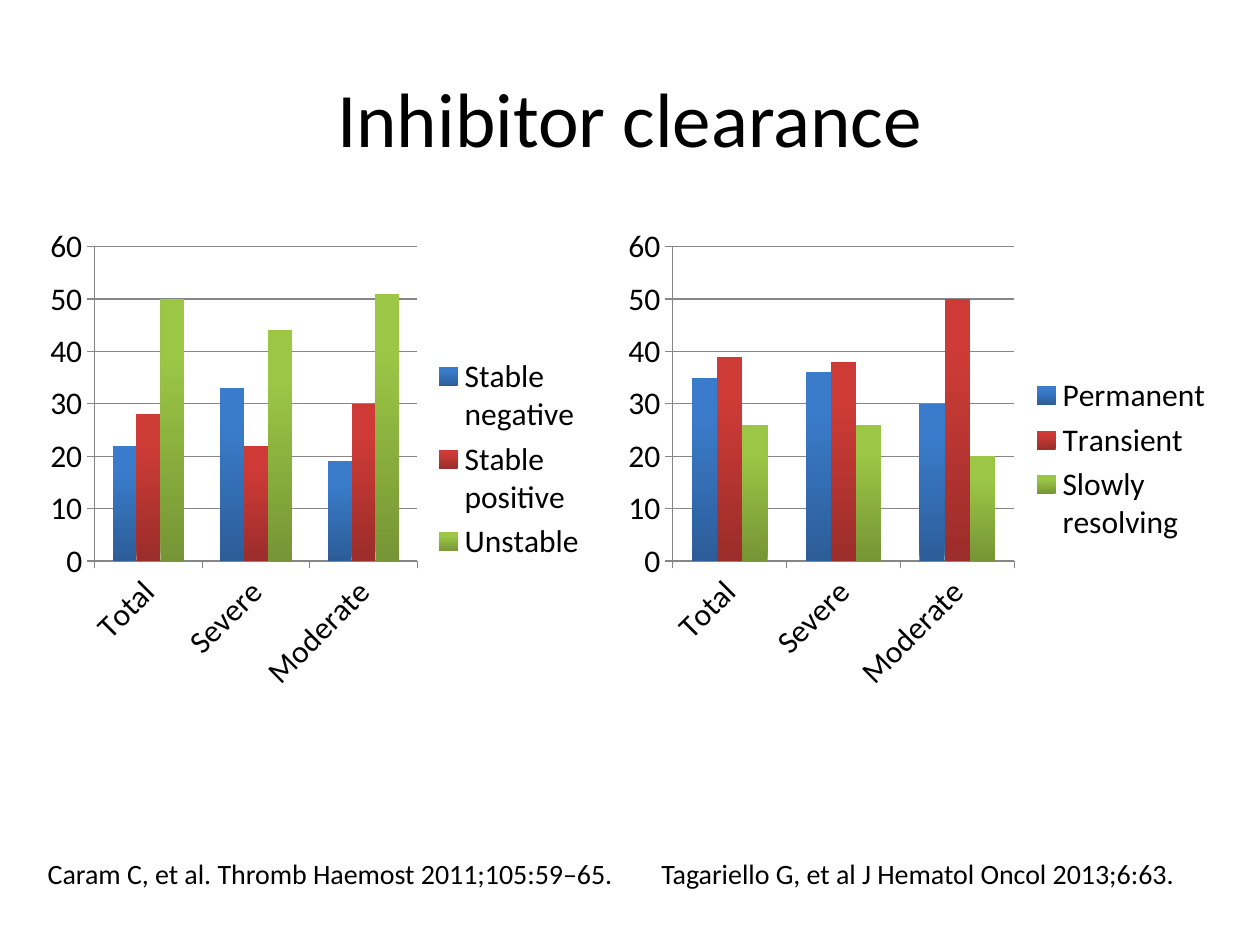
from pptx import Presentation
from pptx.chart.data import CategoryChartData
from pptx.dml.color import RGBColor
from pptx.enum.chart import XL_CHART_TYPE as ChartType, XL_LEGEND_POSITION as LegendPosition
from pptx.enum.chart import XL_TICK_MARK as TickMark
from pptx.enum.text import MSO_ANCHOR as Anchor, PP_ALIGN as Align
from pptx.util import Inches, Pt

FONT = "Calibri"
COLORS = {"text": "000000", "axis": "868686"}
# Bottom and top colour of the columns of each series
GRADIENTS = [("2C5D98", "3A7CCB"), ("9B2D2A", "CE3B37"), ("769535", "9CC746")]
CATEGORIES = ["Total", "Severe", "Moderate"]
CHART_TOP, CHART_HEIGHT = 1.73, 3.83
CITATION_TOP = 6.75

# Left, width and series of each chart
CHARTS = [
    (0.31, 4.45, {"Stable negative": (22, 33, 19),
                  "Stable positive": (28, 22, 30),
                  "Unstable": (50, 44, 51)}),
    (4.89, 4.84, {"Permanent": (35, 36, 30),
                  "Transient": (39, 38, 50),
                  "Slowly resolving": (26, 26, 20)}),
]


def set_attributes(target, **values):
    for name, value in values.items():
        setattr(target, name, value)


def set_font(font, size):
    set_attributes(font, name=FONT, size=Pt(size))
    font.color.rgb = RGBColor.from_string(COLORS["text"])


def add_text(slide, box, text, size, align=Align.LEFT, anchor=Anchor.TOP):
    frame = slide.shapes.add_textbox(*map(Inches, box)).text_frame
    set_attributes(frame, word_wrap=True, vertical_anchor=anchor)
    paragraph = frame.paragraphs[0]
    paragraph.alignment = align
    run = paragraph.add_run()
    run.text = text
    set_font(run.font, size)


def style_line(line):
    line.color.rgb = RGBColor.from_string(COLORS["axis"])
    line.width = Pt(0.75)


def fill_columns(series, gradient):
    series.invert_if_negative = False
    fill = series.format.fill
    fill.gradient()
    fill.gradient_angle = 90
    for stop, color, position in zip(fill.gradient_stops, gradient, (0, 0.8)):
        stop.color.rgb = RGBColor.from_string(color)
        stop.position = position


def add_column_chart(slide, left, width, series_values):
    data = CategoryChartData()
    data.categories = CATEGORIES
    for name, values in series_values.items():
        data.add_series(name, values)
    box = map(Inches, (left, CHART_TOP, width, CHART_HEIGHT))
    chart = slide.shapes.add_chart(ChartType.COLUMN_CLUSTERED, *box, data).chart
    set_attributes(chart, has_title=False, has_legend=True)
    set_attributes(chart.legend, position=LegendPosition.RIGHT, include_in_layout=False)
    set_font(chart.font, 18)

    # Columns
    plot = chart.plots[0]
    set_attributes(plot, gap_width=150, overlap=0, vary_by_categories=False)
    for series, gradient in zip(plot.series, GRADIENTS):
        fill_columns(series, gradient)

    # Axes
    for axis in (chart.category_axis, chart.value_axis):
        axis.major_tick_mark = TickMark.OUTSIDE
        style_line(axis.format.line)
        set_font(axis.tick_labels.font, 18)
    set_attributes(chart.value_axis, minimum_scale=0, maximum_scale=60,
                   major_unit=10, has_major_gridlines=True)
    style_line(chart.value_axis.major_gridlines.format.line)
    # Slanted category labels, in 60000ths of a degree
    chart.category_axis._element.txPr.bodyPr.set("rot", str(-45 * 60000))


def main():
    presentation = Presentation()
    set_attributes(presentation, slide_width=Inches(10), slide_height=Inches(7.5))
    slide = presentation.slides.add_slide(presentation.slide_layouts[6])

    # Title
    add_text(slide, (0.5, 0.3, 9, 1.25), "Inhibitor clearance", 44,
             Align.CENTER, Anchor.MIDDLE)

    # Charts
    for left, width, series_values in CHARTS:
        add_column_chart(slide, left, width, series_values)

    # Citations
    add_text(slide, (0.28, CITATION_TOP, 5.15, 0.5),
             "Caram C, et al. Thromb Haemost 2011;105:59–65.", 16)
    add_text(slide, (5.15, CITATION_TOP, 4.42, 0.5),
             "Tagariello G, et al J Hematol Oncol 2013;6:63.", 16)

    presentation.save("out.pptx")


if __name__ == "__main__":
    main()
